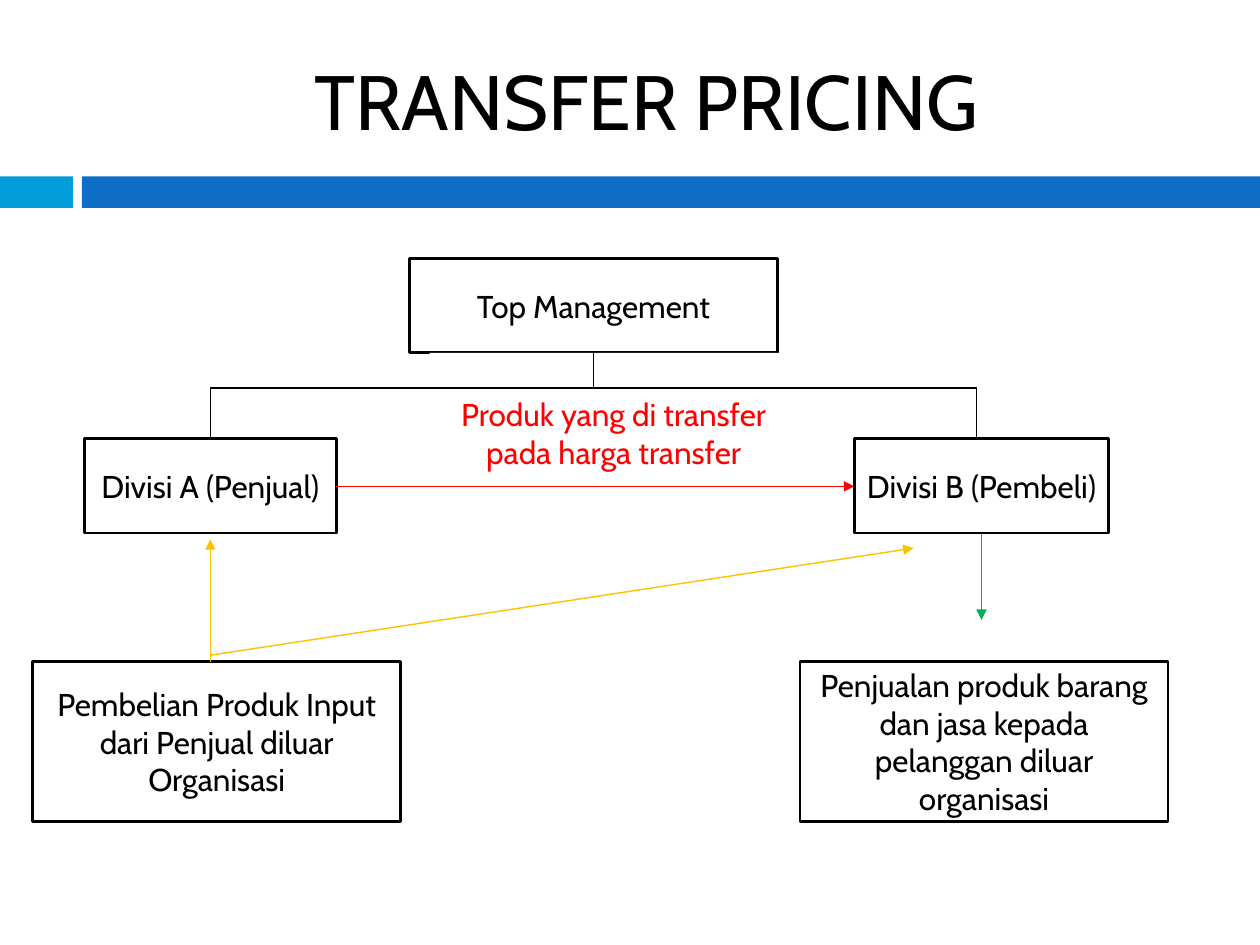
from dataclasses import dataclass

from lxml.etree import SubElement
from pptx import Presentation
from pptx.dml.color import RGBColor
from pptx.enum.shapes import MSO_CONNECTOR, MSO_SHAPE
from pptx.enum.text import MSO_ANCHOR, PP_ALIGN
from pptx.oxml.ns import qn
from pptx.util import Emu, Pt


@dataclass(frozen=True)
class Theme:
    font: str = "Cabin"
    title: int = 44
    body: int = 18
    border: float = 1.5
    rule: float = 0.79
    black: str = "000000"
    white: str = "FFFFFF"
    cyan: str = "009DD9"
    blue: str = "0F6FC6"
    red: str = "FF0000"
    green: str = "00B050"
    amber: str = "FFC000"


T = Theme()
EMU_PER_PX = 9144  # 100 px to the inch

# Content: boxes are left, top, width, height in px
TITLE = ("TRANSFER PRICING", (67, 25, 892, 108))
BARS = [((0, 140, 58, 25), T.cyan), ((65, 140, 935, 25), T.blue)]
BOXES = [
    ("Top Management", (325, 205, 292, 75)),
    ("Divisi A (Penjual)", (67, 348, 200, 75)),
    ("Divisi B (Pembeli)", (678, 348, 202, 75)),
    ("Pembelian Produk Input dari Penjual diluar Organisasi", (26, 525, 292, 127)),
    ("Penjualan produk barang dan jasa kepada pelanggan diluar organisasi",
     (635, 525, 292, 127)),
]
TRANSFER_LABEL = ("Produk yang di transfer pada harga transfer", (341, 280, 292, 127))

# Organisation tree: trunk, crossbar and one drop per division
TRUNK_X, BAR_Y, DIVISION_X = 471, 308, (167, 775)
TREE = [((TRUNK_X, 280), (TRUNK_X, BAR_Y))]
for x in DIVISION_X:
    TREE += [((TRUNK_X, BAR_Y), (x, BAR_Y)), ((x, BAR_Y), (x, 348))]

ARROWS = [
    ((779, 424), (779, 492), T.green),
    ((267, 386), (678, 386), T.red),
    ((167, 525), (167, 428), T.amber),
    ((167, 520), (725, 435), T.amber),
]


def px(*values):
    return [Emu(v * EMU_PER_PX) for v in values]


def rgb(color):
    return RGBColor.from_string(color)


def write(sp, text, size=T.body, color=T.black):
    tf = sp.text_frame
    tf.word_wrap = True
    tf.vertical_anchor = MSO_ANCHOR.MIDDLE
    p = tf.paragraphs[0]
    p.alignment = PP_ALIGN.CENTER
    r = p.add_run()
    r.text = text
    r.font.name = T.font
    r.font.size = Pt(size)
    r.font.color.rgb = rgb(color)


def add_rect(s, box, fill, border=None):
    sp = s.shapes.add_shape(MSO_SHAPE.RECTANGLE, *px(*box))
    sp.shadow.inherit = False
    sp.fill.solid()
    sp.fill.fore_color.rgb = rgb(fill)
    if border:
        sp.line.color.rgb = rgb(border)
        sp.line.width = Pt(T.border)
    else:
        sp.line.fill.background()
    return sp


def add_line(s, start, end, color=T.black, arrow=False):
    line = s.shapes.add_connector(MSO_CONNECTOR.STRAIGHT, *px(*start, *end))
    line.line.color.rgb = rgb(color)
    line.line.width = Pt(T.rule)
    if arrow:
        SubElement(line.line._get_or_add_ln(), qn("a:tailEnd"), type="triangle")
    SubElement(line._element.spPr, qn("a:effectLst"))


def main():
    prs = Presentation()
    prs.slide_width, prs.slide_height = px(1000, 750)
    s = prs.slides.add_slide(prs.slide_layouts[6])

    # Header
    for box, color in BARS:
        add_rect(s, box, color)
    text, box = TITLE
    write(s.shapes.add_textbox(*px(*box)), text, size=T.title)

    # Boxes and the transfer label
    for text, box in BOXES:
        write(add_rect(s, box, T.white, border=T.black), text)
    text, box = TRANSFER_LABEL
    write(add_rect(s, box, T.white), text, color=T.red)

    # Tree lines and flows
    for start, end in TREE:
        add_line(s, start, end)
    for start, end, color in ARROWS:
        add_line(s, start, end, color=color, arrow=True)

    prs.save("out.pptx")


if __name__ == "__main__":
    main()
